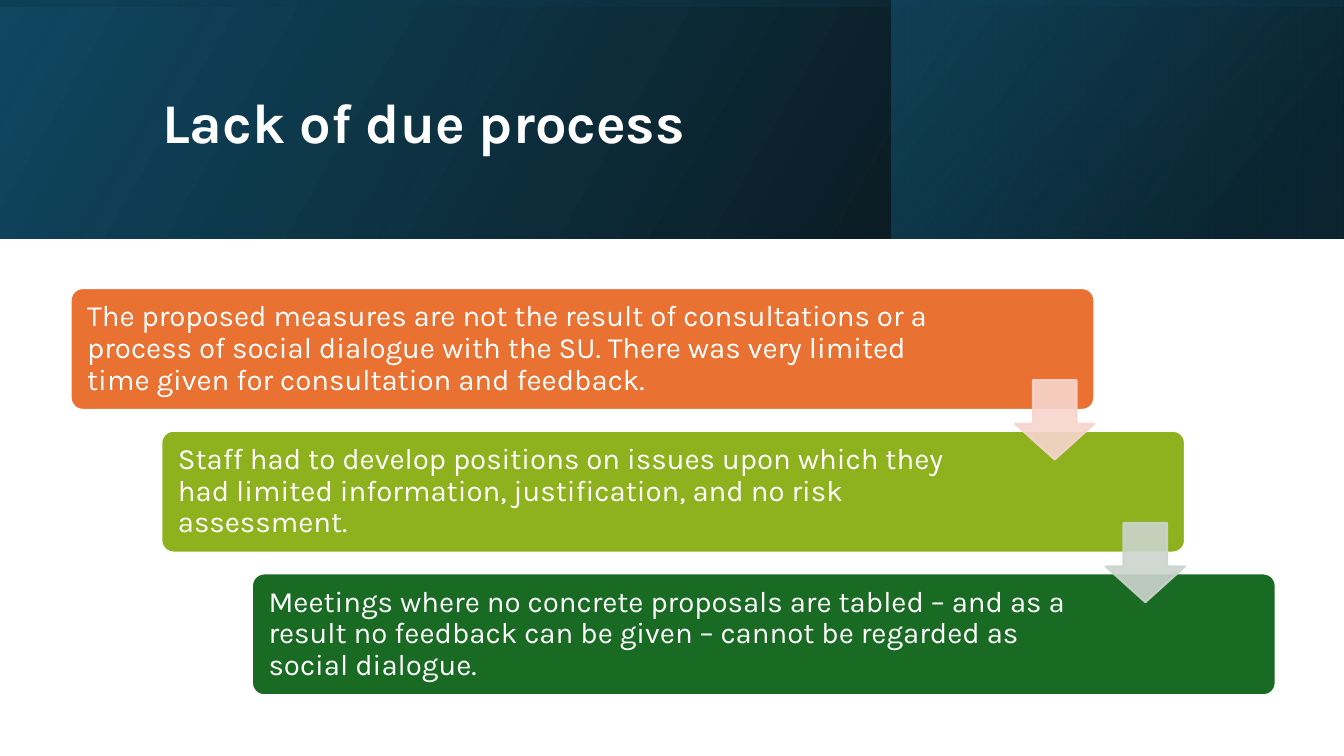
import pptx
import pptx.util
import pptx.dml.color
import pptx.enum.shapes
import pptx.enum.text
import pptx.oxml.ns
from lxml import etree

Cm, Pt = pptx.util.Cm, pptx.util.Pt
RGBColor = pptx.dml.color.RGBColor
Kind = pptx.enum.shapes.MSO_SHAPE
qn = pptx.oxml.ns.qn

WHITE = RGBColor(0xFF, 0xFF, 0xFF)
BLACK = RGBColor(0x00, 0x00, 0x00)
NAVY = RGBColor(0x10, 0x48, 0x62)
DEEP = RGBColor(0x0B, 0x30, 0x41)
TEAL = RGBColor(0x15, 0x60, 0x82)
ORANGE = RGBColor(0xE9, 0x71, 0x32)
LIME = RGBColor(0x8E, 0xB2, 0x1E)
GREEN = RGBColor(0x19, 0x6B, 0x24)
PINK = RGBColor(0xF7, 0xD5, 0xCE)
GREY = RGBColor(0xCC, 0xD4, 0xCD)

FONT = "Karla"
WIDE, HIGH = 33.87, 19.05
BAND = 6.02

# fill, text, room kept free at the right, colour of the arrow that follows
STEPS = [
    (ORANGE, "The proposed measures are not the result of consultations or a "
     "process of social dialogue with the SU. There was very limited time "
     "given for consultation and feedback.", 3.45, PINK),
    (LIME, "Staff had to develop positions on issues upon which they had "
     "limited information, justification, and no risk assessment.", 4.6, GREY),
    (GREEN, "Meetings where no concrete proposals are tabled – and as a "
     "result no feedback can be given – cannot be regarded as social "
     "dialogue.", 4.6, None),
]


def add(slide, kind, x, y, w, h):
    shape = slide.shapes.add_shape(kind, Cm(x), Cm(y), Cm(w), Cm(h))
    shape.shadow.inherit = False
    return shape


def fade(shape, levels):
    """Set the opacity, in percent, of the shape's colours in turn."""
    colors = shape._element.spPr.iter(qn("a:srgbClr"))
    for color, level in zip(list(colors), levels):
        etree.SubElement(color, qn("a:alpha")).set("val", str(level * 1000))


def blend(slide, box, angle, stops, turn=0):
    """Draw a mirrored rectangle with a two-stop gradient."""
    shape = add(slide, Kind.RECTANGLE, *box)
    shape.rotation = turn
    shape._element.spPr.find(qn("a:xfrm")).set("flipH", "1")
    shape.line.fill.background()
    shape.fill.gradient()
    shape.fill.gradient_angle = angle
    for stop, (place, color, _) in zip(shape.fill.gradient_stops, stops):
        stop.position = place
        stop.color.rgb = color
    fade(shape, [level for _, _, level in stops])


def write(frame, text, size, bold=False):
    frame.word_wrap = True
    frame.vertical_anchor = pptx.enum.text.MSO_ANCHOR.MIDDLE
    para = frame.paragraphs[0]
    para.text = text
    para.alignment = pptx.enum.text.PP_ALIGN.LEFT
    para.line_spacing = 0.9
    para.font.name = FONT
    para.font.size = Pt(size)
    para.font.bold = bold
    para.font.color.rgb = WHITE


def header(slide, x, y, w, h):
    side = 11.4
    blend(slide, (x, y, w, h), 30, [(0, BLACK, 96), (1, NAVY, 100)])
    blend(slide, (x + w - side, y, side, h), 40,
          [(0.19, DEEP, 68), (1, TEAL, 48)])
    shift = (w - h) / 2
    blend(slide, (x + shift, y - shift, h, w), 10,
          [(0.23, NAVY, 16), (0.99, BLACK, 45)], 270)
    title = slide.shapes.add_textbox(
        Cm(x + 3.84), Cm(y + 0.97), Cm(27), Cm(4.37))
    write(title.text_frame, "Lack of due process", 40, True)


def card(slide, x, y, w, h, fill, text, room):
    shape = add(slide, Kind.ROUNDED_RECTANGLE, x, y, w, h)
    shape.adjustments[0] = 0.1
    shape.fill.solid()
    shape.fill.fore_color.rgb = fill
    shape.line.color.rgb = WHITE
    shape.line.width = Pt(1.5)
    frame = shape.text_frame
    frame.margin_left, frame.margin_right = Cm(0.33), Cm(room)
    write(frame, text, 21)


def arrow(slide, x, y, size, color):
    shape = add(slide, Kind.DOWN_ARROW, x, y, size, size)
    shape.adjustments[0] = 0.55
    shape.adjustments[1] = 0.45
    shape.fill.solid()
    shape.fill.fore_color.rgb = color
    shape.line.color.rgb = color
    shape.line.width = Pt(1.5)
    fade(shape, [90, 90])


def stairs(slide, x, y, w, h):
    """Place the cards as descending steps, then the arrows over them."""
    wide, tall, size = 25.8, 3.07, 2.0
    last = len(STEPS) - 1
    spots = [(x + i * (w - wide) / last, y + i * (h - tall) / last)
             for i in range(len(STEPS))]
    for (left, top), (fill, text, room, _) in zip(spots, STEPS):
        card(slide, left, top, wide, tall, fill, text, room)
    for (left, top), (_, _, _, color) in zip(spots, STEPS):
        if color is not None:
            arrow(slide, left + wide - size, top + 2.32, size, color)


def main():
    deck = pptx.Presentation()
    deck.slide_width, deck.slide_height = Cm(WIDE), Cm(HIGH)
    slide = deck.slides.add_slide(deck.slide_layouts[6])
    header(slide, 0, 0, WIDE, BAND)
    stairs(slide, 1.78, 7.26, 30.37, 10.26)
    deck.save("out.pptx")


if __name__ == "__main__":
    main()
